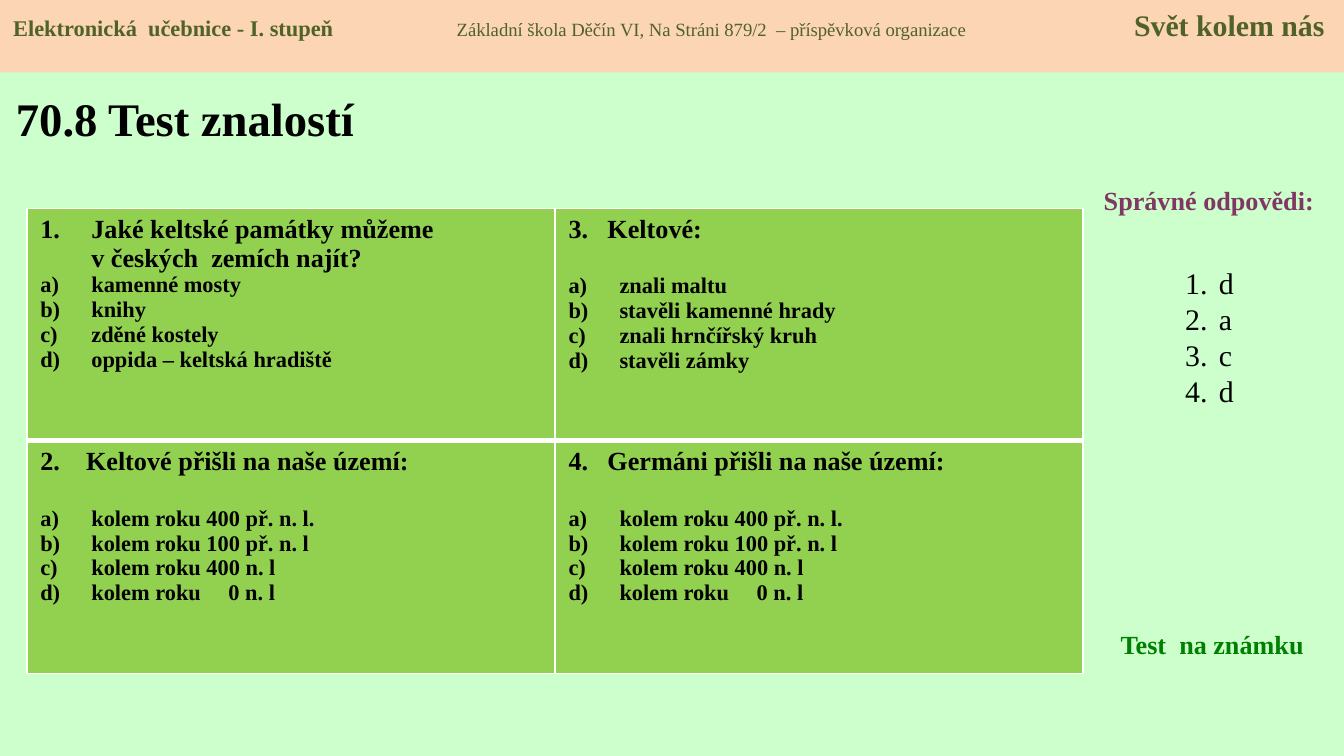
from lxml import etree
from pptx import Presentation
from pptx.dml.color import RGBColor
from pptx.enum.shapes import MSO_SHAPE
from pptx.enum.text import MSO_ANCHOR, MSO_AUTO_SIZE, PP_ALIGN
from pptx.oxml.ns import qn
from pptx.util import Inches, Pt

RECTANGLE = MSO_SHAPE.RECTANGLE
TOP, MIDDLE = MSO_ANCHOR.TOP, MSO_ANCHOR.MIDDLE
GROW, FIXED = MSO_AUTO_SIZE.SHAPE_TO_FIT_TEXT, MSO_AUTO_SIZE.NONE
LEFT, CENTER = PP_ALIGN.LEFT, PP_ALIGN.CENTER

MINT = RGBColor(0xCC, 0xFF, 0xCC)
PEACH = RGBColor(0xFC, 0xD5, 0xB5)
OLIVE = RGBColor(0x4F, 0x62, 0x28)
LIME = RGBColor(0x92, 0xD0, 0x50)
PLUM = RGBColor(0x81, 0x37, 0x63)
GREEN = RGBColor(0x00, 0x80, 0x00)
BLACK = RGBColor(0, 0, 0)
WHITE = RGBColor(0xFF, 0xFF, 0xFF)


def style(run, size, color, bold):
    formats = {"name": "Times New Roman", "size": Pt(size), "bold": bold}
    for attribute, value in formats.items():
        setattr(run.font, attribute, value)
    run.font.color.rgb = color


def lay_out(paragraph, hang=0, numbering=None, tabs=()):
    properties = paragraph._p.get_or_add_pPr()
    if hang:
        properties.set("marL", str(Inches(hang)))
        properties.set("indent", str(-Inches(hang)))
    if numbering:
        etree.SubElement(properties, qn("a:buFont"), typeface="+mj-lt")
        etree.SubElement(properties, qn("a:buAutoNum"), type=numbering)
    if tabs:
        stops = etree.SubElement(properties, qn("a:tabLst"))
        for position in tabs:
            etree.SubElement(stops, qn("a:tab"), pos=str(Inches(position)), algn="l")


prs = Presentation()
prs.slide_width, prs.slide_height = Inches(10), Inches(10) * 9 // 16
slide = prs.slides.add_slide(prs.slide_layouts[6])
slide.background.fill.solid()
slide.background.fill.fore_color.rgb = MINT

labels = [
    ("70.8 Test znalostí", (0.02, 0.55, 3.19, 0.65), 25, BLACK, MIDDLE, LEFT, FIXED),
    ("Správné odpovědi:", (8.05, 1.32, 1.89, 0.34), 14, PLUM, TOP, CENTER, GROW),
    ("Test  na známku", (8.24, 4.63, 1.57, 0.34), 14, GREEN, TOP, LEFT, GROW),
]
for text, place, size, color, anchor, alignment, fit in labels:
    frame = slide.shapes.add_textbox(*map(Inches, place)).text_frame
    formats = {"word_wrap": True, "vertical_anchor": anchor, "auto_size": fit}
    for attribute, value in formats.items():
        setattr(frame, attribute, value)
    line = frame.paragraphs[0]
    line.text, line.alignment = text, alignment
    style(line.runs[0], size, color, True)

years = ["kolem roku 400 př. n. l.", "kolem roku 100 př. n. l",
         "kolem roku 400 n. l", "kolem roku\t0 n. l"]
questions = [
    [
        ("Jaké keltské památky můžeme\vv českých  zemích najít?", 0.38, "arabicPeriod", 0,
         ["kamenné mosty", "knihy", "zděné kostely", "oppida – keltská hradiště"]),
        ("3.\tKeltové:", 0.29, None, 16,
         ["znali maltu", "stavěli kamenné hrady", "znali hrnčířský kruh", "stavěli zámky"]),
    ],
    [
        ("2.\tKeltové přišli na naše území:", 0.34, None, 16, years),
        ("4.\tGermáni přišli na naše území:", 0.29, None, 16, years),
    ],
]
quiz = slide.shapes.add_table(
    2, 2, Inches(0.2), Inches(1.55), Inches(7.86), Inches(3.46)).table
for row, row_questions in enumerate(questions):
    for column, (question, hang, numbering, gap, options) in enumerate(row_questions):
        cell = quiz.cell(row, column)
        borders = {"a:lnL": 1, "a:lnR": 1, "a:lnT": 1, "a:lnB": 1 if row else 3}
        for side, width in borders.items():
            border = etree.SubElement(
                cell._tc.get_or_add_tcPr(), qn(side), w=str(Pt(width)))
            paint = etree.SubElement(border, qn("a:solidFill"))
            etree.SubElement(paint, qn("a:srgbClr"), val=str(WHITE))
        cell.fill.solid()
        cell.fill.fore_color.rgb = LIME

        heading = cell.text_frame.paragraphs[0]
        heading.text = question
        heading.space_after = Pt(gap)
        lay_out(heading, hang, numbering)
        for run in heading.runs:
            style(run, 14, BLACK, True)
        for option in options:
            choice = cell.text_frame.add_paragraph()
            choice.text = option
            lay_out(choice, 0.38, "alphaLcParenR", (1.4,) if "\t" in option else ())
            style(choice.runs[0], 12, BLACK, True)

answers = slide.shapes.add_textbox(
    Inches(8.72), Inches(1.65), Inches(0.84), Inches(1.99)).text_frame
answers.word_wrap = True
answers.margin_top = Inches(0.32)
for index, letter in enumerate("dacd"):
    answer = answers.add_paragraph() if index else answers.paragraphs[0]
    answer.text = letter
    lay_out(answer, 0.25, "arabicPeriod")
    style(answer.runs[0], 16, BLACK, False)

header = slide.shapes.add_shape(RECTANGLE, 0, 0, Inches(10), Inches(0.54))
header.shadow.inherit = False
header.fill.solid()
header.fill.fore_color.rgb = PEACH
header.line.fill.background()
header.text_frame.vertical_anchor = TOP
banner = header.text_frame.paragraphs[0]
banner.alignment = LEFT
lay_out(banner, tabs=(3.3, 8.34))
for text, size, bold in [
    ("Elektronická  učebnice - I. stupeň\t", 12, True),
    ("Základní škola Děčín VI, Na Stráni 879/2  – příspěvková organizace\t", 10, False),
    ("Svět kolem nás", 16, True),
]:
    part = banner.add_run()
    part.text = text
    style(part, size, OLIVE, bold)

prs.save("out.pptx")
